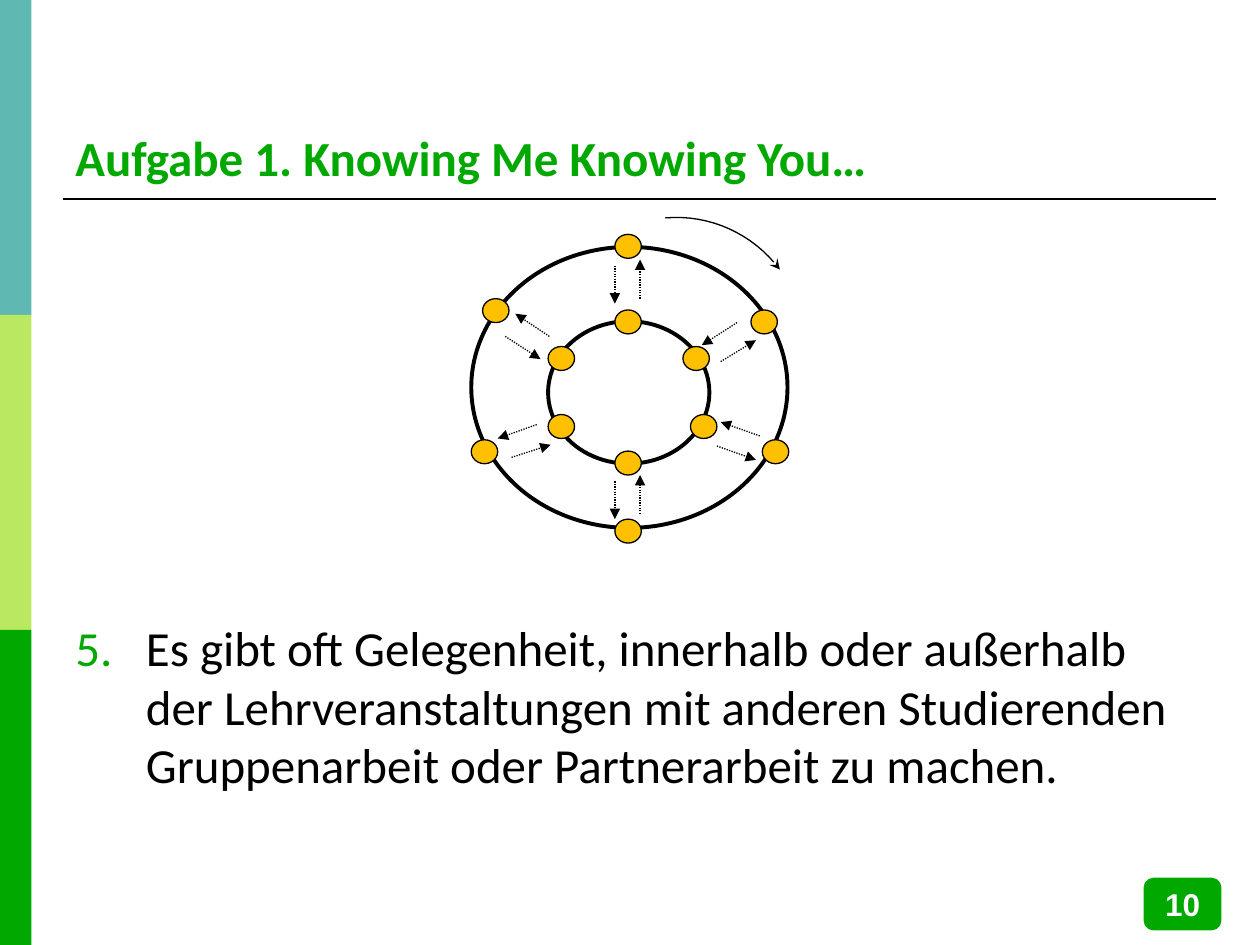
import pptx
import pptx.dml.color
import pptx.enum.dml
import pptx.enum.shapes
import pptx.enum.text
import pptx.oxml
import pptx.oxml.ns
import pptx.util

SHAPE = pptx.enum.shapes.MSO_SHAPE
ANCHOR = pptx.enum.text.MSO_ANCHOR
ALIGN = pptx.enum.text.PP_ALIGN
GREEN, BLACK, WHITE, AMBER = "00A800", "000000", "FFFFFF", "FFC000"
COLS, ROWS = 100, 75


def rgb(color):
    return pptx.dml.color.RGBColor.from_string(color)


def add_xml(parent, tag, content=""):
    """Append an element of the drawing namespace; tag may carry attributes."""
    ns = pptx.oxml.ns.nsdecls("a")
    name = tag.split()[0]
    parent.append(pptx.oxml.parse_xml(f"<a:{tag} {ns}>{content}</a:{name}>"))


class Canvas:
    """Draws on one slide; every length is in columns and rows of a grid."""

    font = "Calibri"

    def __init__(self, prs):
        self.slide = prs.slides.add_slide(prs.slide_layouts[6])
        self.shapes = self.slide.shapes
        self.col = prs.slide_width / COLS
        self.row = prs.slide_height / ROWS

    def point(self, x, y):
        return round(x * self.col), round(y * self.row)

    def outline(self, sp, color, width):
        sp.line.color.rgb = rgb(color)
        sp.line.width = pptx.util.Pt(width)

    def arrowhead(self, sp, end, kind):
        ln = sp.element.spPr.find(pptx.oxml.ns.qn("a:ln"))
        add_xml(ln, f'{end} type="{kind}"')

    def shape(self, kind, x, y, w, h, fill, line=None, width=1):
        sp = self.shapes.add_shape(kind, *self.point(x, y), *self.point(w, h))
        sp.shadow.inherit = False
        sp.fill.solid()
        sp.fill.fore_color.rgb = rgb(fill)
        if line:
            self.outline(sp, line, width)
        else:
            sp.line.fill.background()
        return sp

    def line(self, start, end, width, dotted_arrow=False):
        sp = self.shapes.add_connector(
            pptx.enum.shapes.MSO_CONNECTOR.STRAIGHT,
            *self.point(*start), *self.point(*end))
        self.outline(sp, BLACK, width)
        if dotted_arrow:
            sp.line.dash_style = pptx.enum.dml.MSO_LINE.ROUND_DOT
            self.arrowhead(sp, "tailEnd", "triangle")
        add_xml(sp.element.spPr, "effectLst")

    def curve(self, a, b, c, d, width, steps=16):
        """Cubic Bezier from a to d, with an arrowhead at d."""
        points = []
        for i in range(steps + 1):
            t = i / steps
            u = 1 - t
            weights = (u**3, 3 * u * u * t, 3 * u * t * t, t**3)
            points.append(self.point(*(
                sum(k * v for k, v in zip(weights, axis))
                for axis in zip(a, b, c, d))))
        builder = self.shapes.build_freeform(*points[0])
        builder.add_line_segments(points[1:], close=False)
        sp = builder.convert_to_shape()
        sp.shadow.inherit = False
        sp.fill.background()
        self.outline(sp, BLACK, width)
        self.arrowhead(sp, "tailEnd", "stealth")

    def put_text(self, sp, text, size, color, bold=False, anchor=ANCHOR.TOP,
                 align=ALIGN.LEFT, font=None):
        tf = sp.text_frame
        tf.word_wrap = True
        tf.vertical_anchor = anchor
        p = tf.paragraphs[0]
        p.alignment = align
        r = p.add_run()
        r.text = text
        r.font.name = font or self.font
        r.font.size = pptx.util.Pt(size)
        r.font.bold = bold
        r.font.color.rgb = rgb(color)
        return p

    def text(self, x, y, w, h, content, size, color, **style):
        sp = self.shapes.add_textbox(*self.point(x, y), *self.point(w, h))
        return self.put_text(sp, content, size, color, **style)

    def number(self, p, start, indent, color):
        pPr = p._p.get_or_add_pPr()
        margin = round(indent * self.col)
        pPr.set("marL", str(margin))
        pPr.set("indent", str(-margin))
        add_xml(pPr, "buClr", f'<a:srgbClr val="{color}"/>')
        add_xml(pPr, f'buAutoNum type="arabicPeriod" startAt="{start}"')


def draw_circles(c):
    """Two rings of partners who talk in pairs; the outer ring moves on."""
    for ring in ((37.4, 19.6, 25.1, 22.3), (43.5, 25.5, 12.8, 11.3)):
        c.shape(SHAPE.OVAL, *ring, WHITE, BLACK, 2.25)

    outer = [(48.8, 18.6), (38.3, 23.7), (37.4, 34.9),
             (48.8, 41.2), (59.6, 24.6), (60.5, 34.9)]
    inner = [(48.8, 24.6), (43.5, 27.5), (43.5, 32.9),
             (48.8, 35.8), (54.2, 27.5), (54.8, 32.9)]
    for x, y in outer + inner:
        c.shape(SHAPE.FLOWCHART_CONNECTOR, x, y, 2.1, 1.9, AMBER, BLACK, 0.75)

    talk = [((43.6, 26.7), (40.9, 24.9)), ((40.1, 26.7), (42.9, 28.5)),
            ((42.6, 33.7), (39.5, 34.8)), ((40.6, 36.3), (43.7, 35.3)),
            ((58.5, 25.6), (55.7, 27.4)), ((57.2, 28.7), (60, 27)),
            ((60.3, 34.6), (57.2, 33.5)), ((56.9, 35.4), (60, 36.5))]
    for top in (20.6, 37.7):
        talk += [((48.8, top + 0.5), (48.8, top + 3.5)),
                 ((50.8, top + 3.1), (50.8, top))]
    for start, end in talk:
        c.line(start, end, 0.75, dotted_arrow=True)

    c.curve((52.8, 17.3), (56.3, 17), (59.7, 18.5), (61.9, 21.4), 0.75)


def main():
    prs = pptx.Presentation()
    prs.slide_width = pptx.util.Inches(10)
    prs.slide_height = pptx.util.Inches(7.5)
    c = Canvas(prs)

    band = ROWS / 3
    for i, color in enumerate(("5FB8B2", "BAE860", GREEN)):
        c.shape(SHAPE.RECTANGLE, 0, i * band, 2.5, band, color)
    c.line((5, 15.8), (96.5, 15.8), 1.5)

    c.text(5, 2.8, 91.5, 12.5, "Aufgabe 1. Knowing Me Knowing You…", 28,
           GREEN, bold=True, anchor=ANCHOR.BOTTOM)
    p = c.text(5, 48.5, 91.5, 18.5,
               "Es gibt oft Gelegenheit, innerhalb oder außerhalb der "
               "Lehrveranstaltungen mit anderen Studierenden Gruppenarbeit "
               "oder Partnerarbeit zu machen.", 28, BLACK)
    c.number(p, 5, 5.6, GREEN)

    draw_circles(c)

    badge = c.shape(SHAPE.ROUNDED_RECTANGLE, 90.9, 69.8, 5.9, 3.9,
                    GREEN, GREEN, 2)
    c.put_text(badge, "10", 18, WHITE, bold=True, anchor=ANCHOR.MIDDLE,
               align=ALIGN.CENTER, font="Arial")
    prs.save("out.pptx")


if __name__ == "__main__":
    main()
